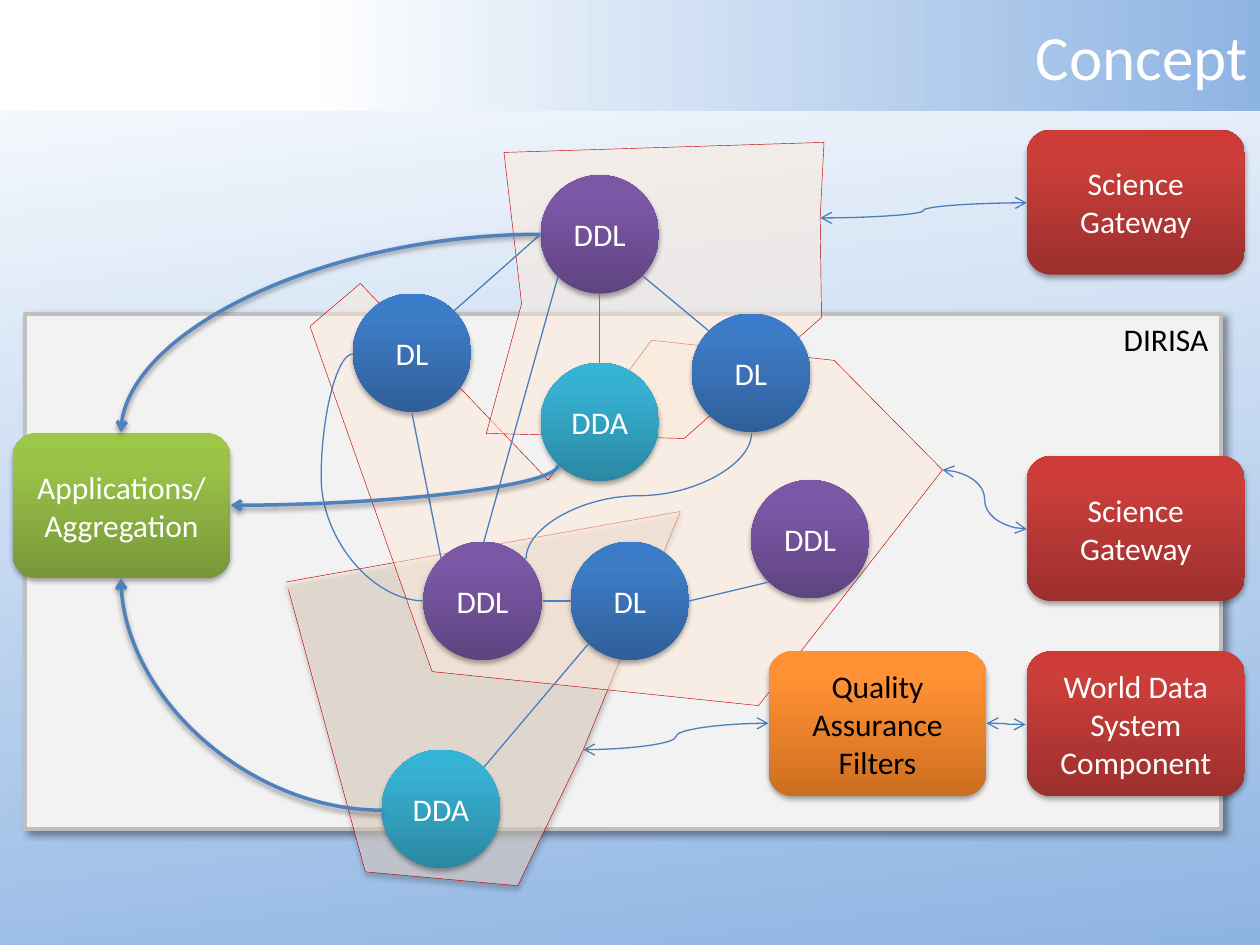
from dataclasses import dataclass
from typing import Optional

from lxml.etree import SubElement
from pptx import Presentation
from pptx.dml.color import RGBColor
from pptx.enum.shapes import MSO_CONNECTOR as Link, MSO_SHAPE as Preset
from pptx.enum.text import MSO_ANCHOR as Anchor, PP_ALIGN as Align
from pptx.oxml.ns import qn
from pptx.util import Inches, Pt

COLORS = {
    "white": "FFFFFF", "black": "000000", "sky": "8EB4E3",
    "panel": "F2F2F2", "panel_edge": "BFBFBF",
    "region": "FDEADA", "region_edge": "C00000",
    "link": "4B7EBC", "flow": "4F81BD",
}
GRADIENTS = {
    "DL": ("2F5F99", "3D7CC7", "3A7CCB"),
    "DDA": ("2A88A2", "37B1D2", "34B4D6"),
    "DDL": ("5F4480", "7B58A6", "7C57A8"),
    "red": ("9C2F2D", "CB3E3A", "CE3B37"),
    "orange": ("CC6E20", "FF9034", "FF9136"),
    "green": ("779737", "9BC348", "9DC746"),
}
NODE_SIZE = 0.94
CARD_WIDTH, CARD_HEIGHT = 1.73, 1.15


@dataclass(frozen=True)
class Shadow:
    alpha: int
    blur: float
    distance: float
    angle: int


PANEL_SHADOW = Shadow(40, 4, 3, 45)
SOFT_SHADOW = Shadow(38, 3.1, 1.6, 90)
NODE_SHADOW = Shadow(35, 3.1, 1.8, 90)


@dataclass(frozen=True)
class Region:
    points: tuple
    closed: bool = True
    shadow: Optional[Shadow] = None


@dataclass(frozen=True)
class Node:
    label: str
    left: float
    top: float


@dataclass(frozen=True)
class Card:
    label: str
    left: float
    top: float
    tone: str
    ink: str = "white"


@dataclass(frozen=True)
class Curve:
    left: float
    top: float
    width: float
    height: float
    turn: int = 0
    flips: str = ""
    bend: Optional[int] = None
    two_way: bool = False
    flow: bool = False


REGIONS = (
    Region(((2.29, 4.68), (2.9, 6.92), (4.11, 7.03), (4.63, 5.95), (5.4, 4.06),
            (2.27, 4.62)), closed=False, shadow=SOFT_SHADOW),
    Region(((2.46, 2.59), (3.43, 5.33), (6.02, 5.6), (7.48, 3.73), (6.62, 2.86),
            (5.17, 2.7), (4.35, 3.81), (2.86, 2.25))),
    Region(((6.54, 1.13), (4, 1.21), (4.14, 2.41), (3.86, 3.44), (5.43, 3.48),
            (6.52, 2.52), (6.51, 1.73))),
)
NODES = (
    Node("DL", 2.8, 2.33), Node("DL", 4.53, 4.3), Node("DL", 5.49, 2.49),
    Node("DDA", 3.03, 5.95), Node("DDA", 4.29, 2.88),
    Node("DDL", 3.36, 4.3), Node("DDL", 5.96, 3.81), Node("DDL", 4.29, 1.39),
)
NODE_LINKS = (
    (3.6, 2.47, 4.29, 1.86), (4.76, 2.33, 4.76, 2.88), (4.43, 2.19, 3.84, 4.3),
    (5.1, 2.19, 5.63, 2.63), (4.31, 4.77, 4.53, 4.77), (3.84, 6.09, 4.67, 5.11),
    (5.47, 4.77, 6.1, 4.62), (3.5, 4.43, 3.27, 3.28),
)
CARDS = (
    Card("Science Gateway", 8.15, 1.03, "red"),
    Card("Science Gateway", 8.15, 3.62, "red"),
    Card("Quality Assurance Filters", 6.1, 5.17, "orange", "black"),
    Card("World Data System Component", 8.15, 5.17, "red"),
    Card("Applications/\nAggregation", 0.1, 3.44, "green"),
)
CURVES = (
    Curve(2.8, 2.81, 0.57, 1.96, bend=-44000),
    Curve(4.57, 3.04, 1, 1.79, 90, "HV"),
    Curve(6.51, 1.61, 1.64, 0.12, flips="V", two_way=True),
    Curve(7.48, 3.73, 0.67, 0.47, two_way=True),
    Curve(4.63, 5.74, 1.47, 0.21, flips="V", two_way=True),
    Curve(7.83, 5.74, 0.31, 0.01, two_way=True),
    Curve(0.96, 1.86, 3.33, 1.57, 180, "V", flow=True),
    Curve(2.97, 2.55, 0.32, 2.6, 90, flow=True),
    Curve(0.96, 4.59, 2.07, 1.84, 180, flow=True),
)


def rgb(name: str) -> RGBColor:
    return RGBColor.from_string(COLORS[name])


def paint_gradient(owner, fill, stops, angle: int) -> None:
    fill.gradient()
    fill.gradient_angle = -angle % 360
    stop_list = owner._element.find(".//" + qn("a:gsLst"))
    for old_stop in list(stop_list):
        stop_list.remove(old_stop)
    for percent, color in stops:
        stop = SubElement(stop_list, qn("a:gs"), pos=str(percent * 1000))
        SubElement(stop, qn("a:srgbClr"), val=color)


def cast_shadow(effects, shadow: Shadow) -> None:
    outer = SubElement(effects, qn("a:outerShdw"), blurRad=str(Pt(shadow.blur)),
                       dist=str(Pt(shadow.distance)), dir=str(shadow.angle * 60000),
                       algn="ctr", rotWithShape="0")
    color = SubElement(outer, qn("a:srgbClr"), val=COLORS["black"])
    SubElement(color, qn("a:alpha"), val=str(shadow.alpha * 1000))


def style_shape(shape, shadow: Optional[Shadow] = None) -> None:
    shape.shadow.inherit = False
    if shadow:
        cast_shadow(shape._element.spPr.find(qn("a:effectLst")), shadow)


def write(shape, text: str, *, size=18, color="white", align=Align.CENTER,
          anchor=Anchor.MIDDLE) -> None:
    frame = shape.text_frame
    frame.text = text
    frame.word_wrap = True
    frame.vertical_anchor = anchor
    for paragraph in frame.paragraphs:
        paragraph.alignment = align
        paragraph.font.name = "Calibri"
        paragraph.font.size = Pt(size)
        paragraph.font.color.rgb = rgb(color)


def add_region(slide, region: Region) -> None:
    points = [(Inches(x), Inches(y)) for x, y in region.points]
    builder = slide.shapes.build_freeform(*points[0])
    builder.add_line_segments(points[1:], close=region.closed)
    outline = builder.convert_to_shape()
    outline.fill.solid()
    outline.fill.fore_color.rgb = rgb("region")
    tint = outline._element.spPr.find(qn("a:solidFill")).find(qn("a:srgbClr"))
    SubElement(tint, qn("a:alpha"), val="50000")
    outline.line.color.rgb = rgb("region_edge")
    outline.line.width = Pt(0.25)
    style_shape(outline, region.shadow)


def add_glossy(slide, preset, left: float, top: float, width: float, height: float,
               tone: str, label: str, ink: str = "white") -> None:
    shape = slide.shapes.add_shape(preset, Inches(left), Inches(top),
                                   Inches(width), Inches(height))
    paint_gradient(shape, shape.fill, zip((0, 80, 100), GRADIENTS[tone]), 270)
    shape.line.fill.background()
    style_shape(shape, NODE_SHADOW)
    write(shape, label, color=ink)


def add_link(slide, kind, ends, color="link", width=0.75, arrows=(),
             shadow: Optional[Shadow] = None):
    link = slide.shapes.add_connector(kind, *(Inches(end) for end in ends))
    link.line.color.rgb = rgb(color)
    link.line.width = Pt(width)
    properties = link._element.spPr
    for arrow in arrows:
        SubElement(properties.find(qn("a:ln")), qn(arrow), type="arrow")
    effects = SubElement(properties, qn("a:effectLst"))
    if shadow:
        cast_shadow(effects, shadow)
    return link


def add_curve(slide, curve: Curve) -> None:
    ends = (curve.left, curve.top, curve.left + curve.width, curve.top + curve.height)
    if curve.flow:
        link = add_link(slide, Link.CURVE, ends, "flow", 2, ("a:tailEnd",), SOFT_SHADOW)
    else:
        arrows = ("a:headEnd", "a:tailEnd") if curve.two_way else ()
        link = add_link(slide, Link.CURVE, ends, arrows=arrows)
    properties = link._element.spPr
    frame = properties.find(qn("a:xfrm"))
    frame.set("rot", str(curve.turn * 60000))
    for axis in curve.flips:
        frame.set("flip" + axis, "1")
    geometry = properties.find(qn("a:prstGeom"))
    if curve.flow:
        geometry.set("prst", "curvedConnector2")
    if curve.bend is not None:
        SubElement(geometry.find(qn("a:avLst")), qn("a:gd"), name="adj1",
                   fmla=f"val {curve.bend}")


def add_panel(slide) -> None:
    panel = slide.shapes.add_shape(Preset.RECTANGLE, Inches(0.2), Inches(2.49),
                                   Inches(9.49), Inches(4.09))
    panel.fill.solid()
    panel.fill.fore_color.rgb = rgb("panel")
    panel.line.color.rgb = rgb("panel_edge")
    panel.line.width = Pt(2)
    style_shape(panel, PANEL_SHADOW)
    write(panel, "DIRISA", color="black", align=Align.RIGHT, anchor=Anchor.TOP)


def add_title(slide) -> None:
    title = slide.shapes.title
    title.left, title.top = Inches(0), Inches(0)
    title.width, title.height = Inches(10), Inches(0.88)
    sky, white = COLORS["sky"], COLORS["white"]
    paint_gradient(title, title.fill, ((0, sky), (76, white), (100, white)), 180)
    write(title, "Concept", size=36, align=Align.RIGHT)
    slide.shapes._spTree.append(title._element)


def main() -> None:
    deck = Presentation()
    deck.slide_width, deck.slide_height = Inches(10), Inches(7.5)
    slide = deck.slides.add_slide(deck.slide_layouts[5])
    paint_gradient(slide, slide.background.fill,
                   ((0, COLORS["white"]), (100, COLORS["sky"])), 83)
    add_panel(slide)
    for region in REGIONS:
        add_region(slide, region)
    for node in NODES:
        add_glossy(slide, Preset.OVAL, node.left, node.top, NODE_SIZE, NODE_SIZE,
                   node.label, node.label)
    for ends in NODE_LINKS:
        add_link(slide, Link.STRAIGHT, ends)
    for card in CARDS:
        add_glossy(slide, Preset.ROUNDED_RECTANGLE, card.left, card.top,
                   CARD_WIDTH, CARD_HEIGHT, card.tone, card.label, card.ink)
    for curve in CURVES:
        add_curve(slide, curve)
    add_title(slide)
    deck.save("out.pptx")


if __name__ == "__main__":
    main()
